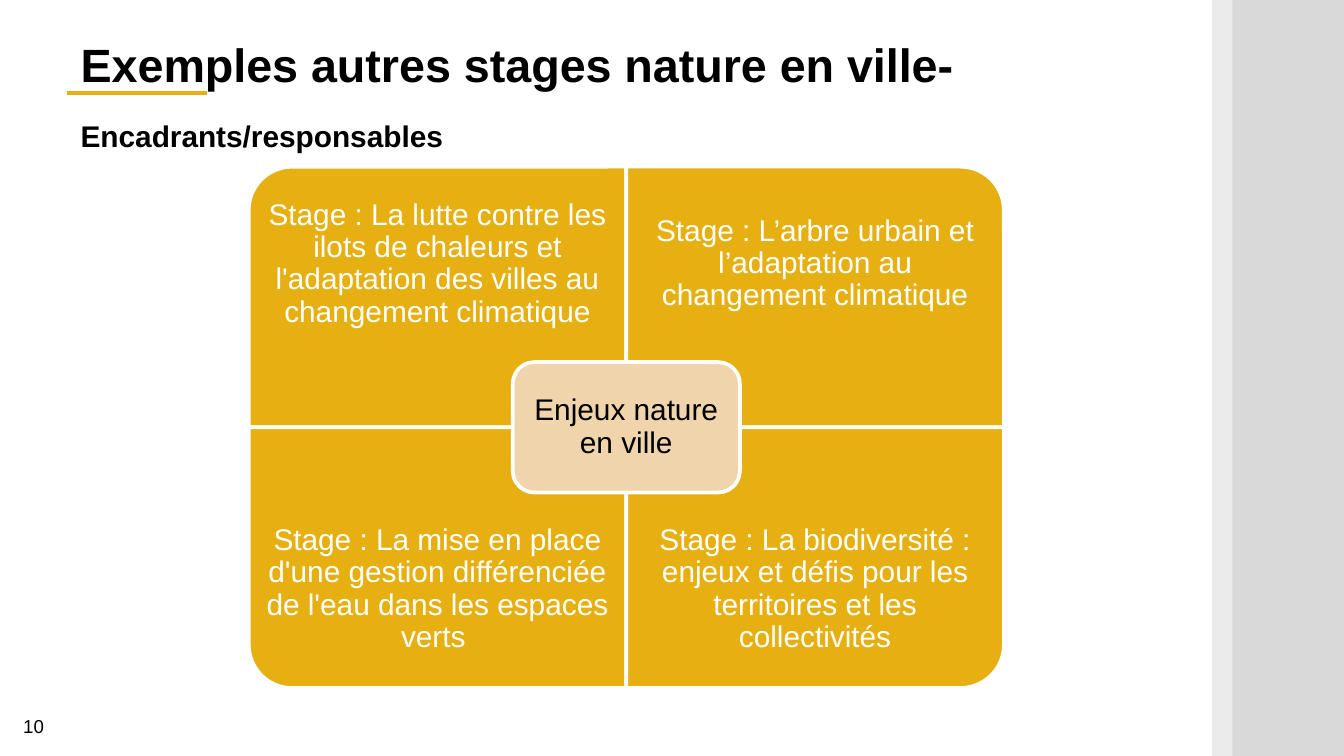
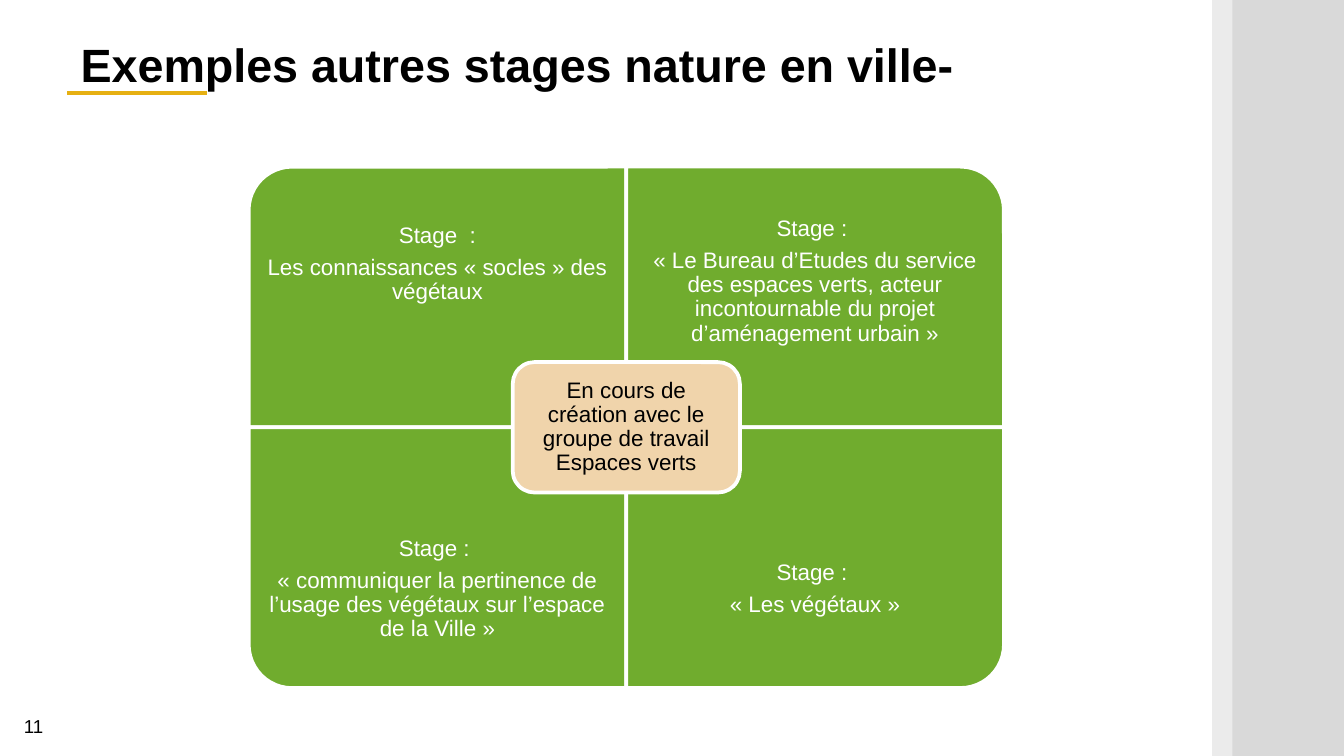
from lxml import etree
from pptx import Presentation
from pptx.dml.color import RGBColor
from pptx.enum.shapes import MSO_CONNECTOR, MSO_SHAPE
from pptx.enum.text import MSO_ANCHOR, MSO_AUTO_SIZE, PP_ALIGN
from pptx.oxml.ns import qn
from pptx.util import Inches, Pt

RECT, ROUND = MSO_SHAPE.RECTANGLE, MSO_SHAPE.ROUNDED_RECTANGLE
CORNER = MSO_SHAPE.ROUND_1_RECTANGLE
LINE = MSO_CONNECTOR.STRAIGHT
TOP, MIDDLE = MSO_ANCHOR.TOP, MSO_ANCHOR.MIDDLE
LEFT, CENTER = PP_ALIGN.LEFT, PP_ALIGN.CENTER
FIXED = MSO_AUTO_SIZE.NONE

GOLD = RGBColor(0xE6, 0xB0, 0x12)
GREEN = RGBColor(0x70, 0xAC, 0x2E)
SAND = RGBColor(0xF0, 0xD4, 0xAB)
GREY = RGBColor(0xD9, 0xD9, 0xD9)
BLACK = RGBColor(0, 0, 0)
WHITE = RGBColor(0xFF, 0xFF, 0xFF)
FONT = "Arial"

# Content: cells run left to right, top to bottom; drop lowers a cell's text
TITLE = "Exemples autres stages nature en ville-"
SLIDES = [
    {
        "number": "10", "sub": "Encadrants/responsables",
        "color": GOLD, "size": 16, "drop": (0, 0, 0, 0),
        "core": "Enjeux nature en ville",
        "cells": [
            ["Stage : La lutte contre les ilots de chaleurs et l'adaptation "
             "des villes au changement climatique"],
            ["Stage : L’arbre urbain et l’adaptation au changement climatique"],
            ["Stage : La mise en place d'une gestion différenciée de l'eau "
             "dans les espaces verts "],
            ["Stage : La biodiversité : enjeux et défis pour les territoires "
             "et les collectivités"],
        ],
    },
    {
        "number": "11", "sub": None,
        "color": GREEN, "size": 12, "drop": (0, 0.26, 0, 0),
        "core": "En cours de création avec le groupe de travail Espaces verts",
        "cells": [
            ["Stage  :", "Les connaissances « socles » des végétaux"],
            ["Stage : ", "« Le Bureau d’Etudes du service des espaces verts, "
             "acteur incontournable du projet d’aménagement urbain »"],
            ["Stage : ", "« communiquer la pertinence de l’usage des végétaux "
             "sur l’espace de la Ville »"],
            ["Stage : ", "« Les végétaux »"],
        ],
    },
]

# Page and matrix geometry
PAGE_W = 10
PAGE_H = PAGE_W * 9 / 16
GRID_X, GRID_Y = 1.85, 1.24
CELL_W, CELL_H = 2.81, 1.94
TEXT_H = 1.45
CORE_W, CORE_H = 1.69, 0.97
TURNS = (270, 0, 180, 90)


def place(x, y, w, h):
    return [Inches(v) for v in (x, y, w, h)]


def set_all(item, values):
    for name, value in values.items():
        setattr(item, name, value)


def set_frame(frame, anchor, pads):
    left, top, right, bottom = place(*pads)
    set_all(frame, {"word_wrap": True, "auto_size": FIXED,
                    "vertical_anchor": anchor, "margin_left": left,
                    "margin_top": top, "margin_right": right,
                    "margin_bottom": bottom})


def write(frame, texts, size, color, align=CENTER, bold=False, para=None):
    for i, text in enumerate(texts):
        p = frame.paragraphs[0] if i == 0 else frame.add_paragraph()
        p.text = text
        set_all(p, {"alignment": align, **(para or {})})
        set_all(p.font, {"name": FONT, "size": Pt(size), "bold": bold})
        p.font.color.rgb = color


def add_block(slide, kind, box, color, edge=None):
    shape = slide.shapes.add_shape(kind, *place(*box))
    shape.shadow.inherit = False
    shape.fill.solid()
    shape.fill.fore_color.rgb = color
    if edge:
        shape.line.color.rgb = edge
        shape.line.width = Pt(2)
    else:
        shape.line.fill.background()
    return shape


def add_frame(slide, number, sub):
    # Side bands
    pale = add_block(slide, RECT, (9.02, 0, 0.16, PAGE_H), GREY)
    tint = pale.element.spPr.find(".//" + qn("a:srgbClr"))
    etree.SubElement(tint, qn("a:alpha"), val="50000")
    add_block(slide, RECT, (9.17, 0, 0.83, PAGE_H), GREY)

    # Rule under the title
    rule = slide.shapes.add_connector(LINE, *place(0.5, 0.69, 1.54, 0.69))
    rule.line.color.rgb = GOLD
    rule.line.width = Pt(2.25)
    etree.SubElement(rule.element.spPr, qn("a:effectLst"))

    # Slide number
    box = slide.shapes.add_textbox(*place(0, 5.27, 0.5, 0.27))
    set_frame(box.text_frame, TOP, (0.1, 0.05, 0.1, 0.05))
    write(box.text_frame, [number], 10, BLACK)

    # Title and subtitle
    title = slide.shapes.title
    names = ("left", "top", "width", "height")
    set_all(title, dict(zip(names, place(0.5, 0.21, 8.44, 0.47))))
    frame = title.text_frame
    set_frame(frame, TOP, (0.1, 0.06, 0.1, 0.05))
    write(frame, [TITLE] + ([sub] if sub else []), 25, BLACK, LEFT, True)
    for p in frame.paragraphs[1:]:
        p.space_before = Pt(13.5)
        p.font.size = Pt(16)


def add_matrix(slide, data):
    size = data["size"]
    para = {"line_spacing": 0.9, "space_after": Pt(size * 0.35)}
    pad = round(size * 0.0075, 2)

    # Four cells, each with its round corner turned outwards
    for i, texts in enumerate(data["cells"]):
        row, col = divmod(i, 2)
        x, y = GRID_X + col * CELL_W, GRID_Y + row * CELL_H
        w, h = (CELL_H, CELL_W) if TURNS[i] % 180 else (CELL_W, CELL_H)
        box = (x + (CELL_W - w) / 2, y + (CELL_H - h) / 2, w, h)
        cell = add_block(slide, CORNER, box, data["color"], WHITE)
        cell.rotation = TURNS[i]

        top = y + row * (CELL_H - TEXT_H - 0.01)
        label = slide.shapes.add_textbox(*place(x, top, CELL_W, TEXT_H))
        set_frame(label.text_frame, MIDDLE,
                  (pad, pad + data["drop"][i], pad, pad))
        write(label.text_frame, texts, size, WHITE, para=para)

    # Centre
    box = (GRID_X + CELL_W - CORE_W / 2, GRID_Y + CELL_H - CORE_H / 2,
           CORE_W, CORE_H)
    core = add_block(slide, ROUND, box, SAND, WHITE)
    set_frame(core.text_frame, MIDDLE, [round(size * 0.0044, 2)] * 4)
    write(core.text_frame, [data["core"]], size, BLACK, para=para)


def main():
    prs = Presentation()
    prs.slide_width, prs.slide_height = Inches(PAGE_W), Inches(PAGE_H)
    for data in SLIDES:
        slide = prs.slides.add_slide(prs.slide_layouts[5])
        add_frame(slide, data["number"], data["sub"])
        add_matrix(slide, data)
    prs.save("out.pptx")


if __name__ == "__main__":
    main()
